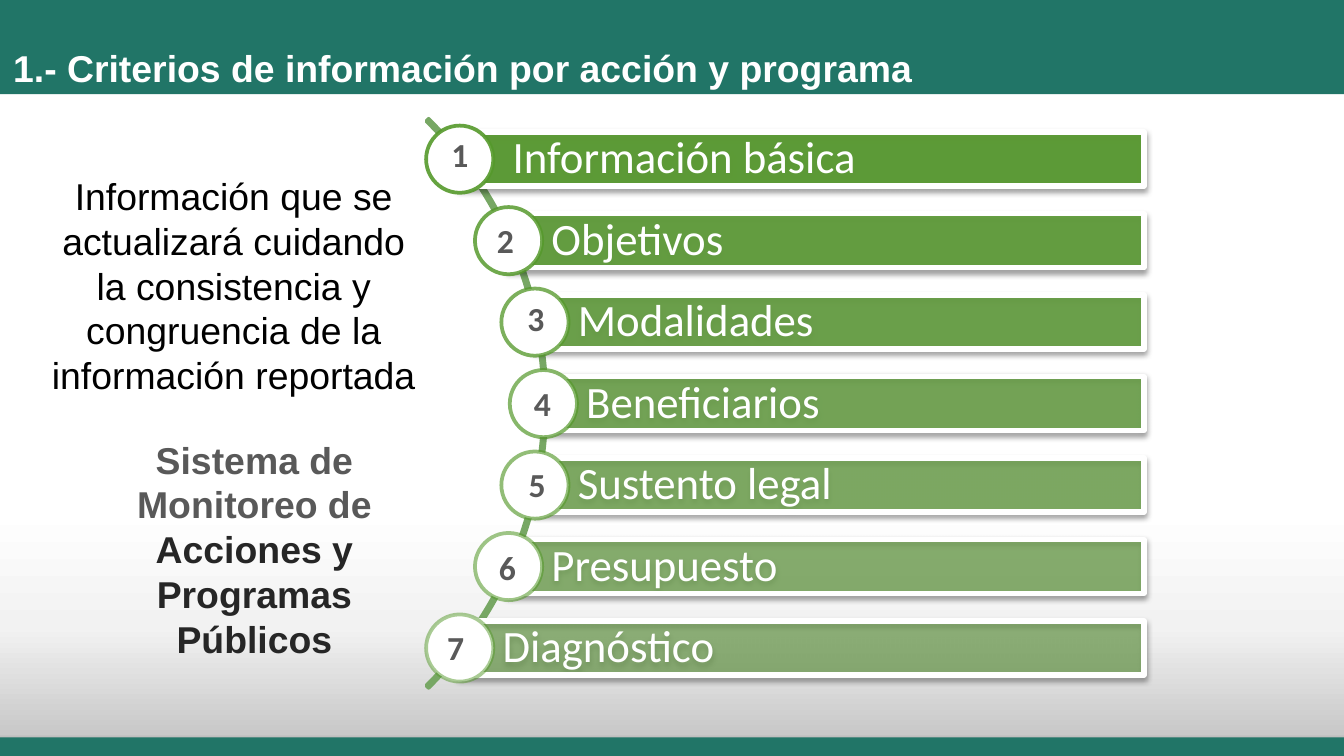
import math

from lxml import etree
from pptx import Presentation
from pptx import util as u
from pptx.dml.color import RGBColor
from pptx.enum import shapes, text
from pptx.oxml import parse_xml
from pptx.oxml.ns import nsdecls, qn

WHITE = RGBColor(0xFF, 0xFF, 0xFF)
BLACK = RGBColor(0, 0, 0)
TEAL = RGBColor(0x21, 0x75, 0x67)
GREEN = RGBColor(0x55, 0x99, 0x2B)
ARC_GREEN = RGBColor(0x77, 0xA7, 0x64)
GRAY = RGBColor(0x59, 0x59, 0x59)
DARK = RGBColor(0x26, 0x26, 0x26)

WIDTH, HEIGHT = 25.4, 14.29
ARC_X, ARC_Y, ARC_RADIUS = 2.73, 7.63, 7.54
STEP, BAR_HEIGHT, BAR_RIGHT, CIRCLE = 1.54, 1.02, 21.62, 1.27

CRITERIA = [
    ("Información básica", 8.28, 2.41),
    ("Objetivos", 9.14, 4.04),
    ("Modalidades", 9.72, 5.51),
    ("Beneficiarios", 9.84, 7.11),
    ("Sustento legal", 9.74, 8.64),
    ("Presupuesto", 9.18, 10.21),
    ("Diagnóstico", 8.2, 11.73),
]


def add_shape(s, kind, x, y, w, h, fill=None, line=None, width=0):
    sp = s.shapes.add_shape(kind, u.Cm(x), u.Cm(y), u.Cm(w), u.Cm(h))
    sp.shadow.inherit = False
    if fill is None:
        sp.fill.background()
    else:
        sp.fill.solid()
        sp.fill.fore_color.rgb = fill
    if line is None:
        sp.line.fill.background()
    else:
        sp.line.color.rgb = line
        sp.line.width = u.Pt(width)
    return sp


def set_opacity(parent, percent):
    color = parent.find(qn("a:solidFill"))[0]
    etree.SubElement(color, qn("a:alpha"), val=str(round(percent * 1000)))


def add_shadow(sp, distance, percent):
    effects = sp._element.spPr.find(qn("a:effectLst"))
    effects.append(parse_xml(
        f'<a:outerShdw {nsdecls("a")} blurRad="{u.Pt(3.1)}" dist="{u.Pt(distance)}" '
        f'dir="5400000" rotWithShape="0"><a:srgbClr val="000000">'
        f'<a:alpha val="{percent * 1000}"/></a:srgbClr></a:outerShdw>'))


def format_run(r, size, font, color, bold=False):
    r.font.size = u.Pt(size)
    r.font.name = font
    r.font.color.rgb = color
    r.font.bold = bold


def add_text(s, x, y, w, h, runs, size, font, bold=False, align=text.PP_ALIGN.LEFT):
    sp = s.shapes.add_textbox(u.Cm(x), u.Cm(y), u.Cm(w), u.Cm(h))
    tf = sp.text_frame
    tf.word_wrap = True
    p = tf.paragraphs[0]
    p.alignment = align
    for content, color in runs:
        r = p.add_run()
        r.text = content
        format_run(r, size, font, color, bold)
    return sp


def add_backdrop(s):
    rect = shapes.MSO_SHAPE.RECTANGLE
    sp = add_shape(s, rect, 0, 4.93, WIDTH, HEIGHT - 4.93, WHITE)
    stops = "".join(
        f'<a:gs pos="{pos * 1000}"><a:srgbClr val="{color}"/></a:gs>'
        for pos, color in ((50, "FFFFFF"), (74, "F2F2F2"), (100, "BFBFBF")))
    spPr = sp._element.spPr
    spPr.replace(spPr.find(qn("a:solidFill")), parse_xml(
        f'<a:gradFill {nsdecls("a")} rotWithShape="1"><a:gsLst>{stops}</a:gsLst>'
        f'<a:lin ang="5400000" scaled="0"/></a:gradFill>'))
    add_shape(s, rect, 0, 0, WIDTH, 1.78, TEAL)
    footer = add_shape(s, rect, -0.1, 13.94, 25.6, 0.36, TEAL)
    add_shadow(footer, 1.8, 35)


def add_arc(s):
    arc = add_shape(s, shapes.MSO_SHAPE.BLOCK_ARC, -4.88, 0.02, 15.21, 15.21,
                    line=ARC_GREEN, width=2)
    for i, value in enumerate((189, 27, 0.004)):
        arc.adjustments[i] = value


def add_criterion(s, i, name):
    offset = (i - 3) * STEP
    x = ARC_X + math.sqrt(ARC_RADIUS ** 2 - offset ** 2)
    y = ARC_Y + offset
    opacity = 90 - 40 * i / 6

    bar = add_shape(s, shapes.MSO_SHAPE.RECTANGLE, x, y - BAR_HEIGHT / 2,
                    BAR_RIGHT - x, BAR_HEIGHT, GREEN, WHITE, 3)
    set_opacity(bar._element.spPr, opacity)
    add_shadow(bar, 1.6, 38)
    tf = bar.text_frame
    tf.text = name
    tf.vertical_anchor = text.MSO_ANCHOR.MIDDLE
    tf.margin_left = u.Cm(1 if i == 0 else 0.81)
    tf.margin_top = tf.margin_right = tf.margin_bottom = u.Cm(0.18)
    p = tf.paragraphs[0]
    p.alignment = text.PP_ALIGN.LEFT
    p.line_spacing = 0.9
    format_run(p.runs[0], 24, "Calibri", WHITE)

    circle = add_shape(s, shapes.MSO_SHAPE.OVAL, x - CIRCLE / 2, y - CIRCLE / 2,
                       CIRCLE, CIRCLE, WHITE, GREEN, 2)
    set_opacity(circle._element.spPr.find(qn("a:ln")), opacity)


def main():
    prs = Presentation()
    prs.slide_width, prs.slide_height = u.Cm(WIDTH), u.Cm(HEIGHT)
    s = prs.slides.add_slide(prs.slide_layouts[6])

    add_backdrop(s)
    title = add_text(s, 0, 0.1, WIDTH, 2.34,
                     [("1.- Criterios de información por acción y programa", WHITE)],
                     20, "Arial", True)
    title.text_frame.vertical_anchor = text.MSO_ANCHOR.MIDDLE

    add_arc(s)
    for i, (name, _, _) in enumerate(CRITERIA):
        add_criterion(s, i, name)
    for i, (_, x, y) in enumerate(CRITERIA):
        add_text(s, x, y, 1.09, 1.04, [(str(i + 1), GRAY)], 18, "Calibri", True)

    add_text(s, 1.75, 8.13, 6.12, 4.52,
             [("Sistema de Monitoreo de ", GRAY), ("Acciones y Programas Públicos", DARK)],
             20, "Arial", True, text.PP_ALIGN.CENTER)
    add_text(s, 0.56, 3.15, 7.72, 4.52,
             [("Información que se actualizará cuidando la consistencia y "
               "congruencia de la información reportada", BLACK)],
             20, "Arial", align=text.PP_ALIGN.CENTER)

    prs.save("out.pptx")


if __name__ == "__main__":
    main()
